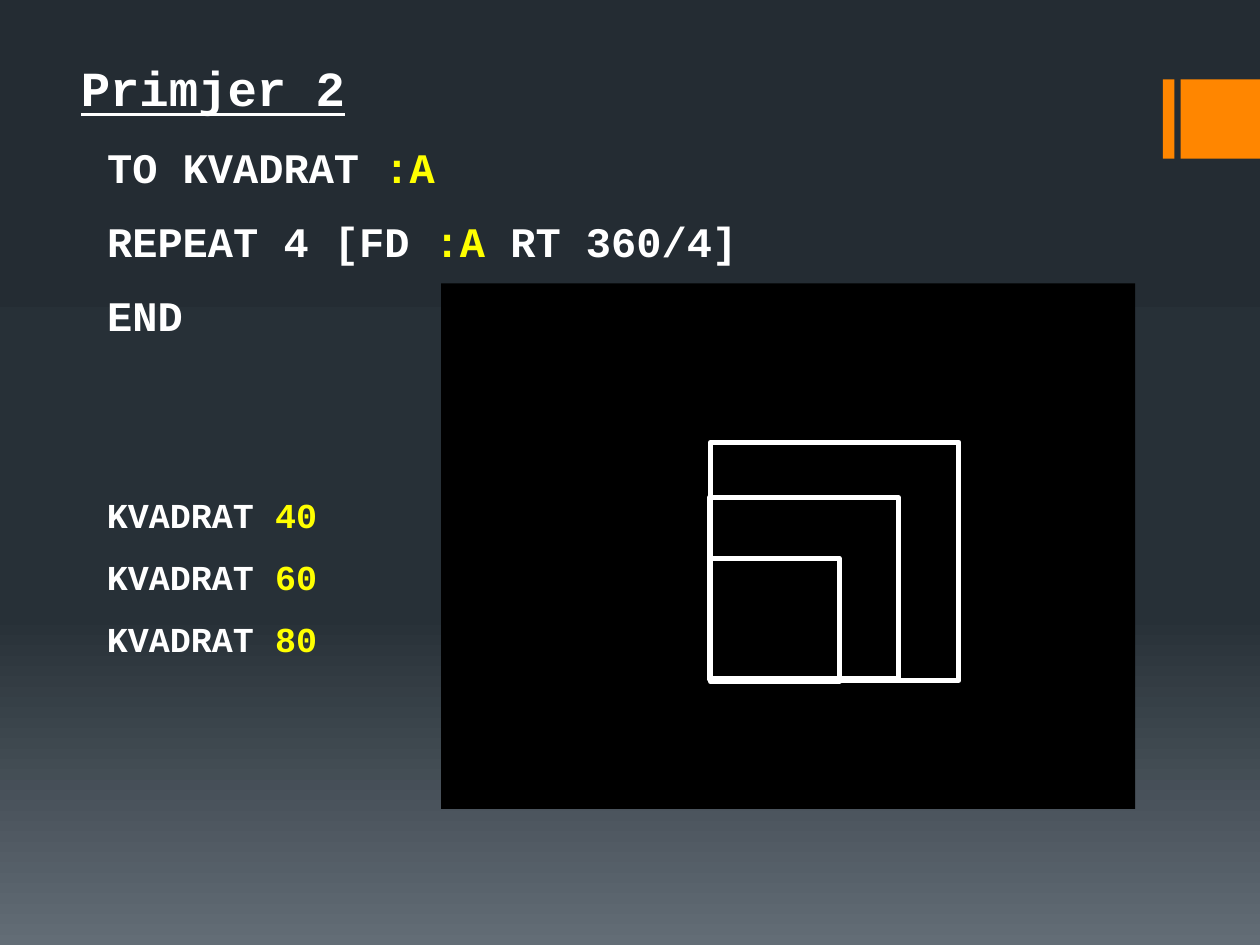
from copy import deepcopy

from pptx import Presentation
from pptx.dml.color import RGBColor
from pptx.enum.shapes import MSO_SHAPE
from pptx.enum.text import MSO_ANCHOR, MSO_AUTO_SIZE, PP_ALIGN
from pptx.oxml.ns import qn
from pptx.oxml.xmlchemy import OxmlElement
from pptx.util import Inches, Pt

RECTANGLE = MSO_SHAPE.RECTANGLE
TOP = MSO_ANCHOR.TOP
NO_AUTOFIT = MSO_AUTO_SIZE.NONE
LEFT = PP_ALIGN.LEFT
CENTER = PP_ALIGN.CENTER

FONT = "Courier New"
SPACE_RATIO = 0.57
COLORS = {
    "sky": "242C33",
    "middle": "273037",
    "ground": "636D76",
    "accent": "FF8600",
    "screen": "000000",
    "text": "FFFFFF",
    "value": "FFFF00",
}


def color(name):
    return RGBColor.from_string(COLORS[name])


def paint_background(page):
    fill = page.background.fill
    fill.gradient()
    fill.gradient_angle = 270
    stop_list = page.element.find(".//" + qn("a:gsLst"))
    stop_list.append(deepcopy(stop_list[-1]))
    stops = (("sky", 0), ("middle", 0.65), ("ground", 1))
    for stop, (name, position) in zip(fill.gradient_stops, stops):
        stop.color.rgb = color(name)
        stop.position = position


def place(box, left, top, width, height):
    box.left, box.top = Inches(left), Inches(top)
    box.width, box.height = Inches(width), Inches(height)


def add_rectangle(page, left, top, width, height, fill=None, line=None):
    box = page.shapes.add_shape(
        RECTANGLE, Inches(left), Inches(top), Inches(width), Inches(height)
    )
    box.shadow.inherit = False
    if fill:
        box.fill.solid()
        box.fill.fore_color.rgb = color(fill)
    else:
        box.fill.background()
    if line:
        box.line.color.rgb = color(line)
        box.line.width = Pt(3)
    else:
        box.line.fill.background()


def write_lines(box, lines, size, align=LEFT, underline=False):
    frame = box.text_frame
    frame.word_wrap = True
    frame.auto_size = NO_AUTOFIT
    frame.vertical_anchor = TOP
    for index, spans in enumerate(lines):
        para = frame.add_paragraph() if index else frame.paragraphs[0]
        para.alignment = align
        para.space_before = Pt(round(size * SPACE_RATIO, 1) if index else 0)
        properties = para._p.get_or_add_pPr()
        properties.set("marL", "0")
        properties.set("indent", "0")
        properties.append(OxmlElement("a:buNone"))
        para.font.name = FONT
        para.font.size = Pt(size)
        para.font.bold = True
        para.font.underline = underline
        for text, name in spans:
            span = para.add_run()
            span.text = text
            span.font.color.rgb = color(name)


def main():
    deck = Presentation()
    deck.slide_width, deck.slide_height = Inches(10), Inches(7.5)
    page = deck.slides.add_slide(deck.slide_layouts[1])
    paint_background(page)

    for left, width in ((9.23, 0.09), (9.37, 0.63)):
        add_rectangle(page, left, 0.63, width, 0.63, fill="accent")
    add_rectangle(page, 3.5, 2.25, 5.51, 4.17, fill="screen")

    title = page.shapes.title
    place(title, 0.35, 0.41, 2.68, 0.57)
    write_lines(title, [[("Primjer 2", "text")]], 28, CENTER, True)

    code = page.placeholders[1]
    place(code, 0.75, 1.07, 5.31, 2.3)
    write_lines(code, [
        [("TO KVADRAT ", "text"), (":A", "value")],
        [("REPEAT 4 [FD ", "text"), (":A", "value"), (" RT 360/4]", "text")],
        [("END", "text")],
    ], 24)

    for square in (
        (5.64, 3.51, 1.97, 1.89),
        (5.63, 3.95, 1.5, 1.44),
        (5.64, 4.43, 1.02, 0.98),
    ):
        add_rectangle(page, *square, line="text")

    calls = page.shapes.add_textbox(
        Inches(0.75), Inches(3.87), Inches(2.84), Inches(1.43)
    )
    write_lines(calls, [
        [("KVADRAT ", "text"), (side, "value")] for side in ("40", "60", "80")
    ], 20)

    deck.save("out.pptx")


if __name__ == "__main__":
    main()
